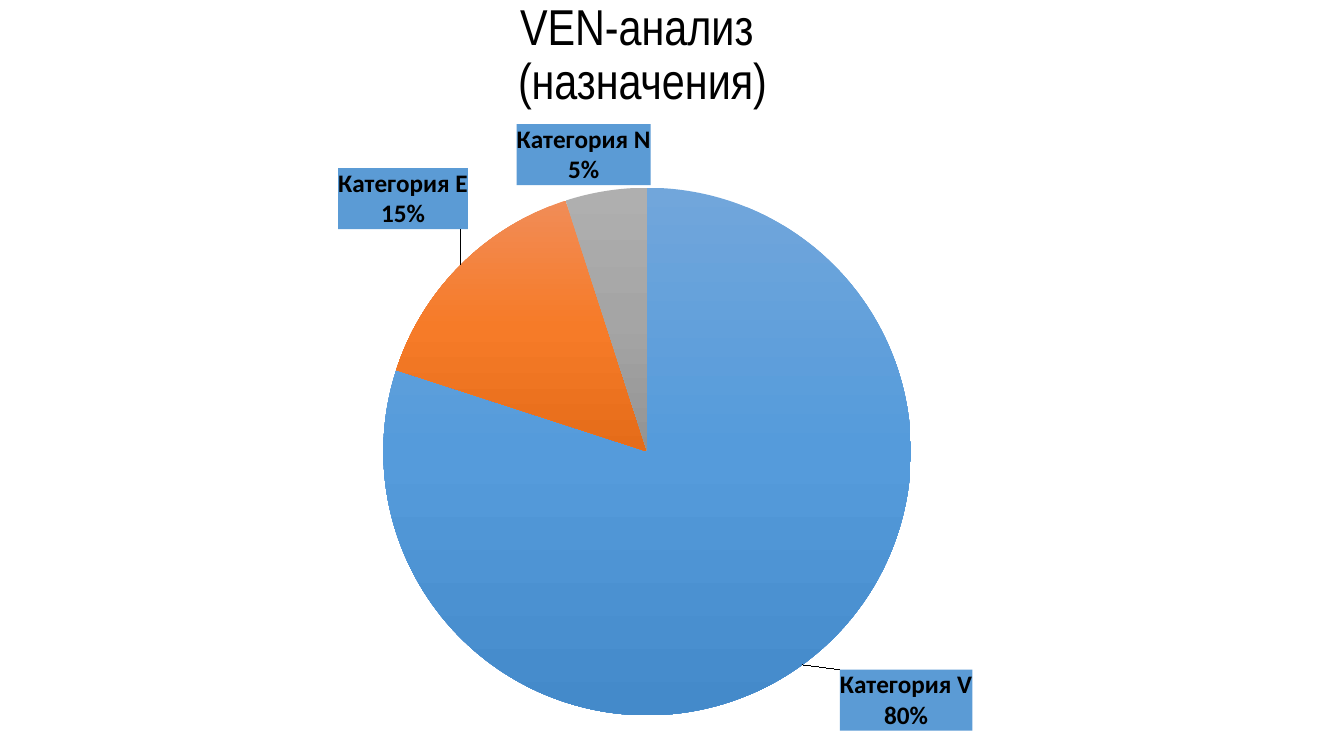
from copy import deepcopy

from lxml import etree
from pptx import Presentation
from pptx import util as u
from pptx.chart.data import CategoryChartData
from pptx.dml.color import RGBColor
from pptx.enum import chart as charts, text
from pptx.oxml import parse_xml
from pptx.oxml.ns import nsdecls, qn

PX = 9525
BLACK = RGBColor(0x00, 0x00, 0x00)
LABEL_BLUE = RGBColor(0x5B, 0x9B, 0xD5)
BLUES = RGBColor(0x71, 0xA6, 0xDB), RGBColor(0x55, 0x9B, 0xDB), RGBColor(0x44, 0x8A, 0xCA)
ORANGES = RGBColor(0xF1, 0x8C, 0x57), RGBColor(0xF6, 0x7B, 0x28), RGBColor(0xE5, 0x6C, 0x19)
GREYS = RGBColor(0xAF, 0xAF, 0xAF), RGBColor(0xA5, 0xA5, 0xA5), RGBColor(0x93, 0x93, 0x93)

CATEGORIES = [
    ("Категория V", 80, BLUES, (0.03, 0)),
    ("Категория E", 15, ORANGES, (0.01, -0.05)),
    ("Категория N", 5, GREYS, (0.04, 0)),
]
PLOT_AREA = {"x": 0.055, "y": 0.104, "w": 0.842, "h": 0.832}


class VenSlide:
    """Builds the slide with one style for its title and pie chart."""

    title_font = "Arial Narrow"
    chart_font = "Calibri"

    def __init__(self, deck):
        self.slide = deck.slides.add_slide(deck.slide_layouts[6])

    def title(self, wording, *box):
        frame = self.slide.shapes.add_textbox(*(n * PX for n in box)).text_frame
        frame.word_wrap = True
        frame.vertical_anchor = text.MSO_ANCHOR.MIDDLE
        heading = frame.paragraphs[0]
        heading.text = wording
        heading.alignment = text.PP_ALIGN.CENTER
        heading.line_spacing = 0.9
        heading.font.name = self.title_font
        heading.font.size = u.Pt(36)
        heading.font.color.rgb = BLACK

    def pie(self, categories, *box):
        shares = CategoryChartData()
        shares.categories = [name for name, *_ in categories]
        shares.add_series("Series 1", [value for _, value, *_ in categories])
        chart = self.slide.shapes.add_chart(
            charts.XL_CHART_TYPE.PIE, *(n * PX for n in box), shares).chart
        chart.has_title = chart.has_legend = False
        self.style(chart.font, 10)
        self.place_plot(chart)

        plot = chart.plots[0]
        plot.vary_by_categories = True
        series = plot.series[0]
        labels = series.data_labels
        labels.show_value = False
        labels.show_percentage = labels.show_category_name = True
        labels.number_format, labels.number_format_is_linked = "0%", False
        labels.position = charts.XL_LABEL_POSITION.OUTSIDE_END
        self.style(labels.font, 18, True)
        for index, (_, _, shades, offset) in enumerate(categories):
            self.shade(series.points[index], shades)
            labels._element.insert(index, self.label(index, *offset))
            self.style(series.points[index].data_label.font, 18, True)

    def style(self, font, size, bold=False):
        font.name = self.chart_font
        font.size = u.Pt(size)
        font.bold = bold
        font.color.rgb = BLACK

    def place_plot(self, chart):
        area = chart._chartSpace.find(".//" + qn("c:plotArea"))
        for old in area.findall(qn("c:layout")):
            area.remove(old)
        layout = etree.Element(qn("c:layout"))
        manual = etree.SubElement(layout, qn("c:manualLayout"))
        modes = {"layoutTarget": "inner", "xMode": "edge", "yMode": "edge"}
        for tag, value in {**modes, **PLOT_AREA}.items():
            etree.SubElement(manual, qn("c:" + tag), val=str(value))
        area.insert(0, layout)

    def shade(self, point, shades):
        point.format.line.fill.background()
        fill = point.format.fill
        fill.gradient()
        fill.gradient_angle = 270
        stops = fill.gradient_stops._gsLst
        stops.append(deepcopy(stops[-1]))
        for stop, position, shade in zip(fill.gradient_stops, (0, 0.5, 1), shades):
            stop.position = position
            stop.color.rgb = shade

    def label(self, index, x, y):
        return parse_xml(
            f'<c:dLbl {nsdecls("c", "a")}><c:idx val="{index}"/>'
            f'<c:layout><c:manualLayout><c:x val="{x}"/><c:y val="{y}"/>'
            '</c:manualLayout></c:layout><c:numFmt formatCode="0%" sourceLinked="0"/>'
            f'<c:spPr><a:solidFill><a:srgbClr val="{LABEL_BLUE}"/></a:solidFill></c:spPr>'
            '<c:dLblPos val="outEnd"/><c:showLegendKey val="0"/><c:showVal val="0"/>'
            '<c:showCatName val="1"/><c:showSerName val="0"/><c:showPercent val="1"/>'
            '<c:showBubbleSize val="0"/><c:separator>\n</c:separator></c:dLbl>')


def main():
    deck = Presentation()
    deck.slide_width, deck.slide_height = 1280 * PX, 720 * PX
    ven = VenSlide(deck)
    ven.title("VEN-анализ \v(назначения)", 371, 13, 482, 81)
    ven.pie(CATEGORIES, 99, 116, 1087, 604)
    deck.save("out.pptx")


if __name__ == "__main__":
    main()
